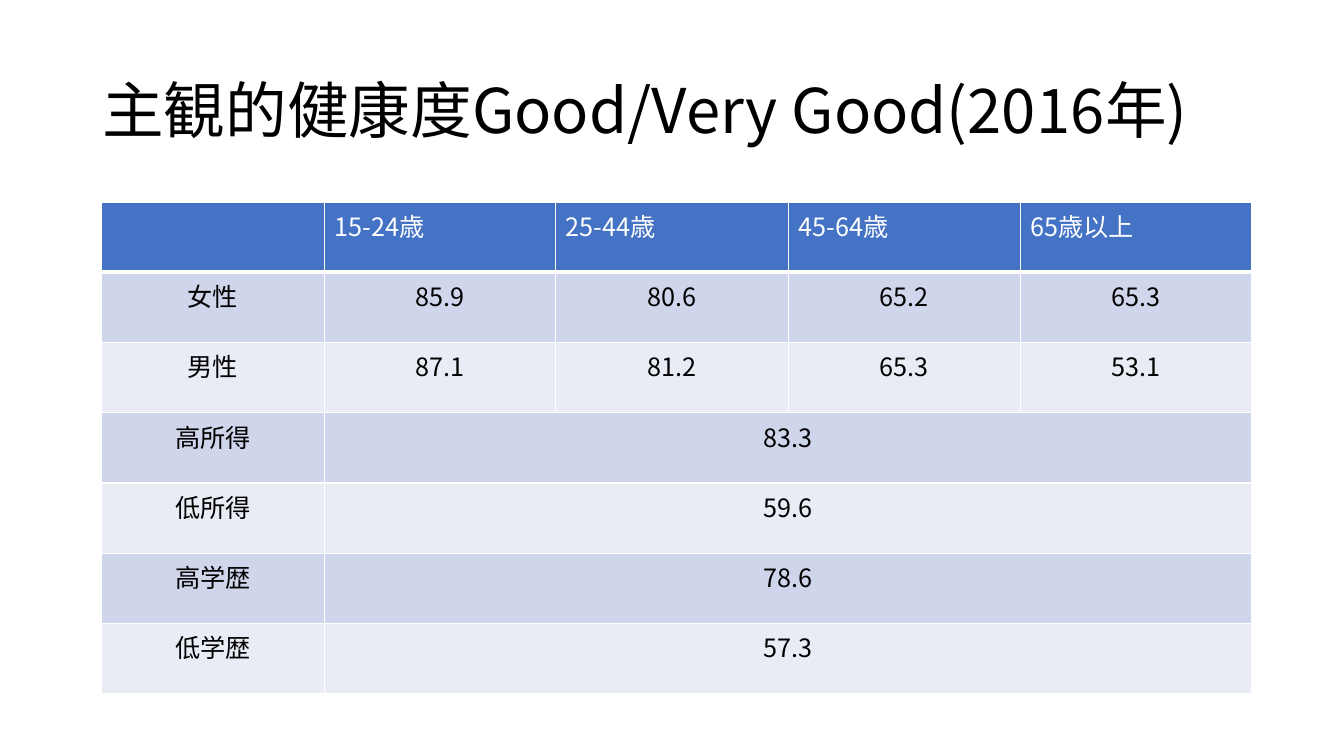
import pptx
import pptx.dml.color
import pptx.enum.text
import pptx.oxml.ns
import pptx.util
from lxml import etree

Cm = pptx.util.Cm
Pt = pptx.util.Pt
RGBColor = pptx.dml.color.RGBColor
Align = pptx.enum.text.PP_ALIGN
qn = pptx.oxml.ns.qn

BLACK = RGBColor(0x00, 0x00, 0x00)
WHITE = RGBColor(0xFF, 0xFF, 0xFF)
HEADER_BLUE = RGBColor(0x44, 0x72, 0xC4)
BANDS = (RGBColor(0xCF, 0xD5, 0xEA), RGBColor(0xE9, 0xEB, 0xF5))

AGE_GROUPS = ["", "15-24歳", "25-44歳", "45-64歳", "65歳以上"]
HEALTH_ROWS = [
    ["女性", "85.9", "80.6", "65.2", "65.3"],
    ["男性", "87.1", "81.2", "65.3", "53.1"],
    ["高所得", "83.3"],
    ["低所得", "59.6"],
    ["高学歴", "78.6"],
    ["低学歴", "57.3"],
]
COLUMN_WIDTHS = [5.63, 5.82, 5.87, 5.84, 5.84]
ROW_HEIGHT = 1.77


class SlideBuilder:
    """Hold the style and the current slide, and add its elements."""

    font = "Noto Sans CJK JP"
    title_size = 44
    body_size = 18

    def __init__(self, deck):
        self.slide = deck.slides.add_slide(deck.slide_layouts[6])

    def span(self, para, text, size, color):
        span = para.add_run()
        span.text = text
        span.font.size = Pt(size)
        span.font.bold = False
        span.font.name = self.font
        span.font.color.rgb = color
        east_asian = etree.SubElement(span.font._element, qn("a:ea"))
        east_asian.set("typeface", self.font)

    def title(self, text, left, top, width, height):
        box = self.slide.shapes.add_textbox(Cm(left), Cm(top), Cm(width), Cm(height))
        frame = box.text_frame
        frame.word_wrap = True
        frame.vertical_anchor = pptx.enum.text.MSO_ANCHOR.MIDDLE
        para = frame.paragraphs[0]
        para.line_spacing = 0.9
        self.span(para, text, self.title_size, BLACK)

    def borders(self, cell, bottom):
        properties = cell._tc.get_or_add_tcPr()
        for side, points in (("L", 1), ("R", 1), ("T", 1), ("B", bottom)):
            line = etree.SubElement(properties, qn(f"a:ln{side}"), w=str(Pt(points)))
            fill = etree.SubElement(line, qn("a:solidFill"))
            etree.SubElement(fill, qn("a:srgbClr"), val=str(WHITE))

    def cell(self, cell, text, fill, color, align, bottom=1):
        self.borders(cell, bottom)
        cell.fill.solid()
        cell.fill.fore_color.rgb = fill
        para = cell.text_frame.paragraphs[0]
        para.alignment = align
        if text:
            self.span(para, text, self.body_size, color)

    def table(self, header, rows, left, top, widths, row_height):
        row_count = len(rows) + 1
        table = self.slide.shapes.add_table(
            row_count, len(header), Cm(left), Cm(top),
            Cm(sum(widths)), Cm(row_height * row_count),
        ).table
        for column, width in zip(table.columns, widths):
            column.width = Cm(width)
        for row in table.rows:
            row.height = Cm(row_height)
        last = len(header) - 1
        for index, text in enumerate(header):
            self.cell(table.cell(0, index), text, HEADER_BLUE, WHITE, Align.LEFT, 3)
        for number, values in enumerate(rows, start=1):
            band = BANDS[(number - 1) % 2]
            if len(values) < len(header):
                table.cell(number, 1).merge(table.cell(number, last))
            padded = values + [""] * (len(header) - len(values))
            for index, text in enumerate(padded):
                self.cell(table.cell(number, index), text, band, BLACK, Align.CENTER)


def main():
    deck = pptx.Presentation()
    deck.slide_width = Cm(33.87)
    deck.slide_height = Cm(19.05)
    page = SlideBuilder(deck)
    page.title("主観的健康度Good/Very Good(2016年)", 2.33, 1.01, 29.21, 3.68)
    page.table(AGE_GROUPS, HEALTH_ROWS, 2.55, 5.09, COLUMN_WIDTHS, ROW_HEIGHT)
    deck.save("out.pptx")


if __name__ == "__main__":
    main()
